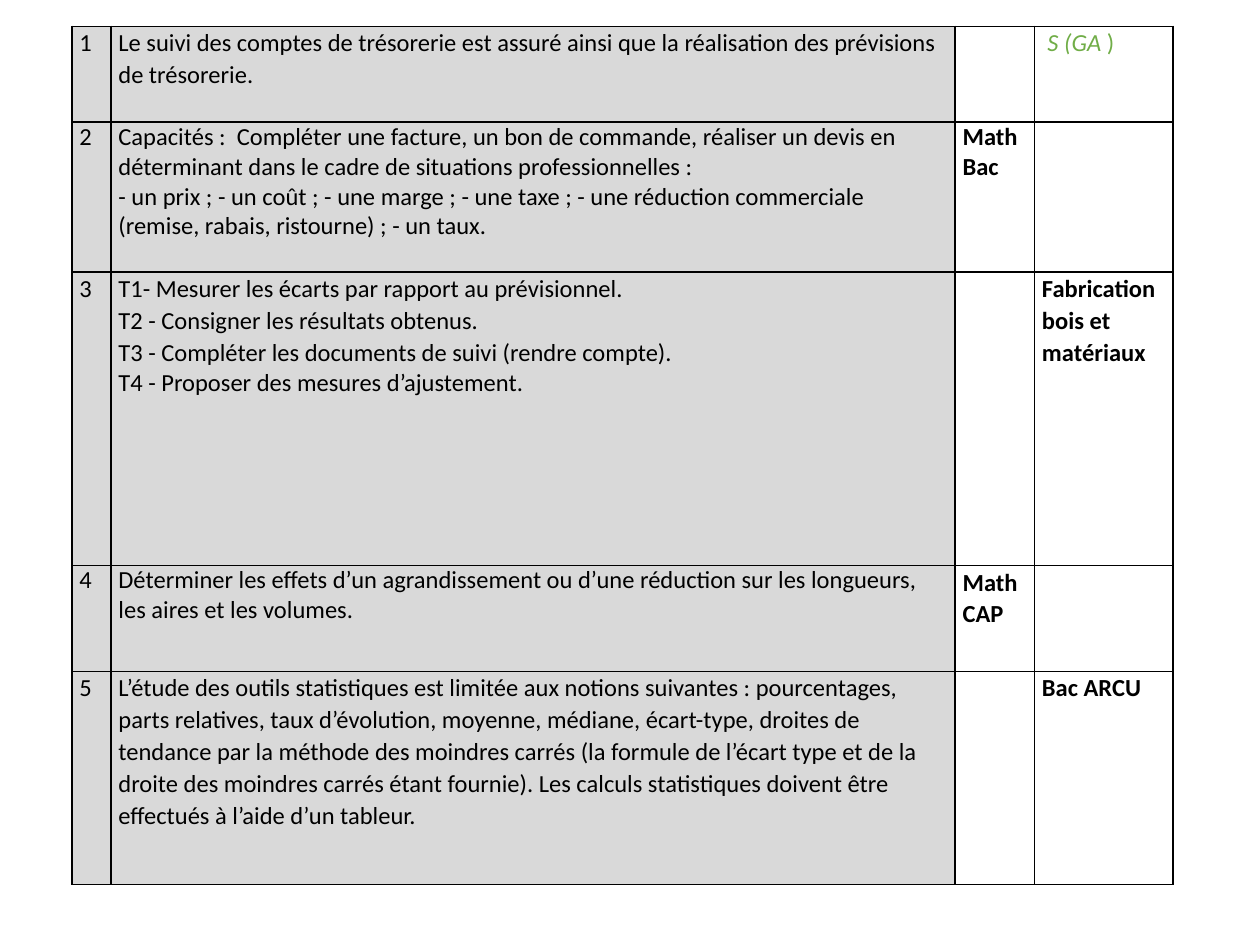
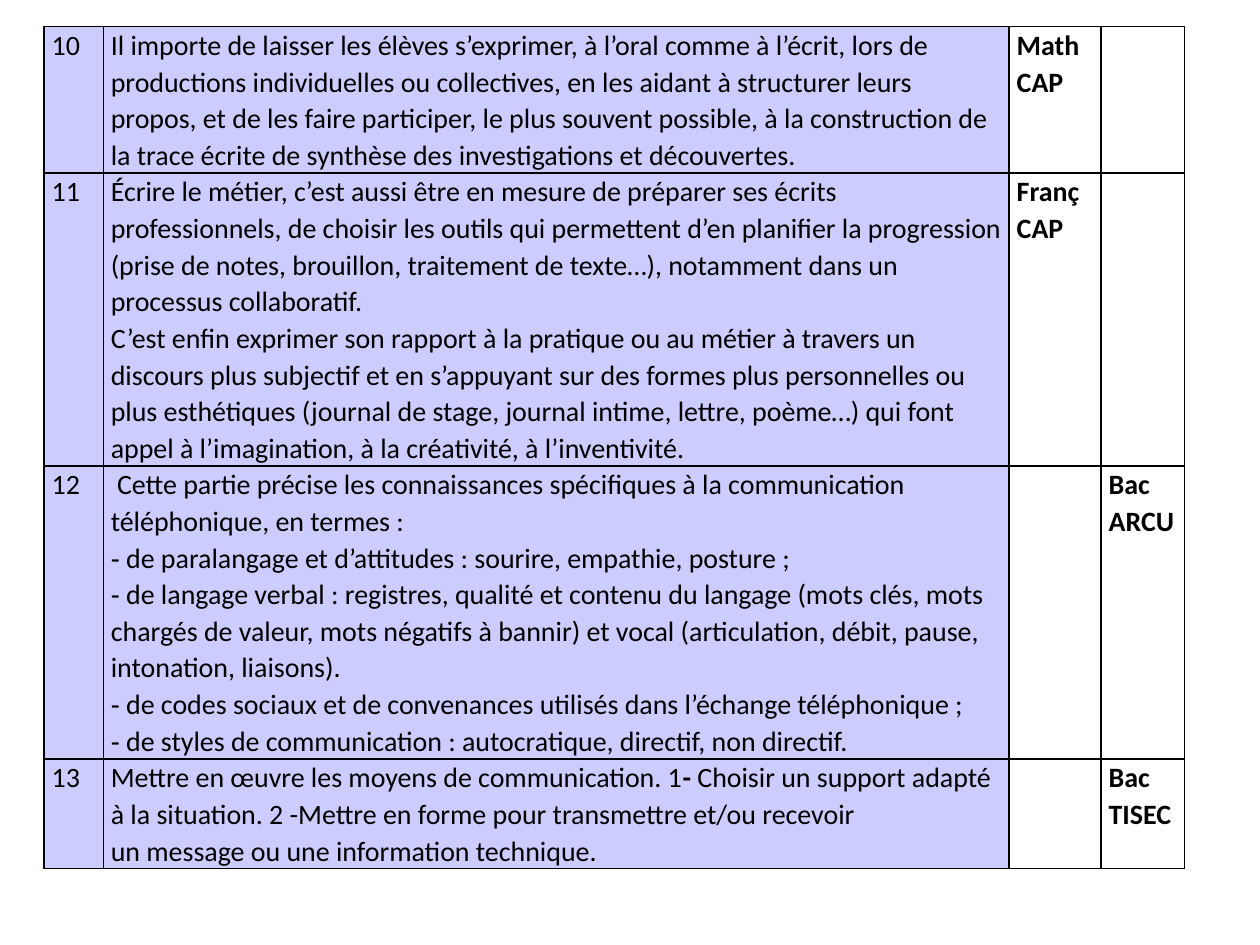
from dataclasses import dataclass

from lxml import etree
from pptx import Presentation
from pptx.dml.color import RGBColor
from pptx.oxml.ns import qn
from pptx.util import Inches, Pt

BLANK_LAYOUT = 6
BORDER_SIDES = ("a:lnL", "a:lnR", "a:lnT", "a:lnB")
LOOSE, SINGLE = 1.07, 1.0


@dataclass(frozen=True)
class Theme:
    font: str = "Calibri"
    ink: str = "000000"
    paper: str = "FFFFFF"
    gray: str = "D9D9D9"
    lavender: str = "CCCCFF"
    green: str = "70AD47"
    small: int = 14
    large: int = 16
    border: float = 1
    side_margin: float = 0.06
    table_top: float = 0.21


@dataclass(frozen=True)
class Run:
    text: str
    bold: bool = False
    italic: bool = False
    color: str = Theme.ink


@dataclass(frozen=True)
class Line:
    runs: tuple
    spacing: float = LOOSE


@dataclass(frozen=True)
class Row:
    height: float
    number: str
    statement: tuple
    general: tuple = ()
    vocational: tuple = ()
    spacing: float = LOOSE


def lines(*texts, spacing=LOOSE, bold=False):
    """Make one single-run line for each text."""
    return tuple(Line((Run(text, bold),), spacing) for text in texts)


def subject(*texts, spacing=LOOSE):
    return lines(*texts, spacing=spacing, bold=True)


class Deck:
    def __init__(self, theme):
        self.theme = theme
        self.presentation = Presentation()
        self.presentation.slide_width = Inches(10)
        self.presentation.slide_height = Inches(7.5)
        self.slide = None

    def add_slide(self):
        layout = self.presentation.slide_layouts[BLANK_LAYOUT]
        self.slide = self.presentation.slides.add_slide(layout)

    def add_skill_table(self, left, widths, rows, tint, size):
        """Add a table whose number and statement columns are tinted."""
        table = self.slide.shapes.add_table(
            len(rows), len(widths), Inches(left), Inches(self.theme.table_top),
            Inches(sum(widths)), Inches(sum(row.height for row in rows))).table
        table.first_row = table.horz_banding = False
        for column, width in zip(table.columns, widths):
            column.width = Inches(width)
        fills = (tint, tint, self.theme.paper, self.theme.paper)
        for table_row, row in zip(table.rows, rows):
            table_row.height = Inches(row.height)
            contents = (lines(row.number, spacing=row.spacing),
                        row.statement, row.general, row.vocational)
            for cell, content, fill in zip(table_row.cells, contents, fills):
                self.style_cell(cell, fill)
                self.add_lines(cell.text_frame, content, size)

    def style_cell(self, cell, fill):
        cell.margin_left = cell.margin_right = Inches(self.theme.side_margin)
        cell.margin_top = cell.margin_bottom = 0
        properties = cell._tc.get_or_add_tcPr()
        for side in BORDER_SIDES:
            border = etree.SubElement(properties, qn(side), w=str(Pt(self.theme.border)))
            solid = etree.SubElement(border, qn("a:solidFill"))
            etree.SubElement(solid, qn("a:srgbClr"), val=self.theme.ink)
        cell.fill.solid()
        cell.fill.fore_color.rgb = RGBColor.from_string(fill)

    def add_lines(self, text_frame, content, size):
        for index, line in enumerate(content):
            paragraph = text_frame.add_paragraph() if index else text_frame.paragraphs[0]
            paragraph.line_spacing = line.spacing
            for part in line.runs:
                run = paragraph.add_run()
                run.text = part.text
                run.font.name = self.theme.font
                run.font.size = Pt(size)
                run.font.bold = part.bold
                run.font.italic = part.italic
                run.font.color.rgb = RGBColor.from_string(part.color)


MANAGEMENT_ROWS = (
    Row(0.76, "1",
        lines("Le suivi des comptes de trésorerie est assuré ainsi que la réalisation "
              "des prévisions de trésorerie."),
        vocational=(Line((Run(" S (GA", italic=True, color=Theme.green),
                          Run(" )", color=Theme.green))),)),
    Row(1.19, "2",
        lines("Capacités :  Compléter une facture, un bon de commande, réaliser un devis "
              "en déterminant dans le cadre de situations professionnelles :",
              "- un prix ; - un coût ; - une marge ; - une taxe ; - une réduction "
              "commerciale (remise, rabais, ristourne) ; - un taux.", spacing=SINGLE),
        general=subject("Math", "Bac", spacing=SINGLE), spacing=SINGLE),
    Row(2.33, "3",
        lines("T1- Mesurer les écarts par rapport au prévisionnel.",
              "T2 - Consigner les résultats obtenus.",
              "T3 - Compléter les documents de suivi (rendre compte).")
        + lines("T4 - Proposer des mesures d’ajustement.", spacing=SINGLE),
        vocational=subject("Fabrication bois et matériaux")),
    Row(0.84, "4",
        lines("Déterminer les effets d’un agrandissement ou d’une réduction sur les "
              "longueurs, les aires et les volumes.", spacing=SINGLE),
        general=subject("Math CAP"), spacing=SINGLE),
    Row(1.69, "5",
        lines("L’étude des outils statistiques est limitée aux notions suivantes : "
              "pourcentages, parts relatives, taux d’évolution, moyenne, médiane, "
              "écart-type, droites de tendance par la méthode des moindres carrés (la "
              "formule de l’écart type et de la droite des moindres carrés étant fournie). "
              "Les calculs statistiques doivent être effectués à l’aide d’un tableur."),
        vocational=subject("Bac ARCU")),
)

COMMUNICATION_ROWS = (
    Row(1.16, "10",
        lines("Il importe de laisser les élèves s’exprimer, à l’oral comme à l’écrit, lors "
              "de productions individuelles ou collectives, en les aidant à structurer "
              "leurs propos, et de les faire participer, le plus souvent possible, à la "
              "construction de la trace écrite de synthèse des investigations et "
              "découvertes."),
        general=subject("Math CAP")),
    Row(2.32, "11",
        lines("Écrire le métier, c’est aussi être en mesure de préparer ses écrits "
              "professionnels, de choisir les outils qui permettent d’en planifier la "
              "progression (prise de notes, brouillon, traitement de texte…), notamment "
              "dans un processus collaboratif.",
              "C’est enfin exprimer son rapport à la pratique ou au métier à travers un "
              "discours plus subjectif et en s’appuyant sur des formes plus personnelles "
              "ou plus esthétiques (journal de stage, journal intime, lettre, poème…) qui "
              "font appel à l’imagination, à la créativité, à l’inventivité."),
        general=subject("Franç CAP")),
    Row(2.32, "12",
        (Line((Run(" ", bold=True),
               Run("Cette partie précise les connaissances spécifiques à la communication "
                   "téléphonique, en termes :"))),)
        + lines("‐ de paralangage et d’attitudes : sourire, empathie, posture ;",
                "‐ de langage verbal : registres, qualité et contenu du langage (mots clés, "
                "mots chargés de valeur, mots négatifs à bannir) et vocal (articulation, "
                "débit, pause, intonation, liaisons).",
                "‐ de codes sociaux et de convenances utilisés dans l’échange "
                "téléphonique ;",
                "‐ de styles de communication : autocratique, directif, non directif."),
        vocational=subject("Bac ARCU")),
    Row(0.87, "13",
        (Line((Run("Mettre en œuvre les moyens de communication. 1"),
               Run("- ", bold=True),
               Run("Choisir un support adapté à la situation. 2 -Mettre en forme pour "
                   "transmettre et/ou recevoir"))),)
        + lines("un message ou une information technique."),
        vocational=subject("Bac TISEC")),
)


def main():
    theme = Theme()
    deck = Deck(theme)
    deck.add_slide()
    deck.add_skill_table(0.57, (0.31, 6.7, 0.63, 1.1), MANAGEMENT_ROWS,
                         theme.gray, theme.small)
    deck.add_slide()
    deck.add_skill_table(0.35, (0.47, 7.19, 0.73, 0.66), COMMUNICATION_ROWS,
                         theme.lavender, theme.large)
    deck.presentation.save("out.pptx")


if __name__ == "__main__":
    main()
